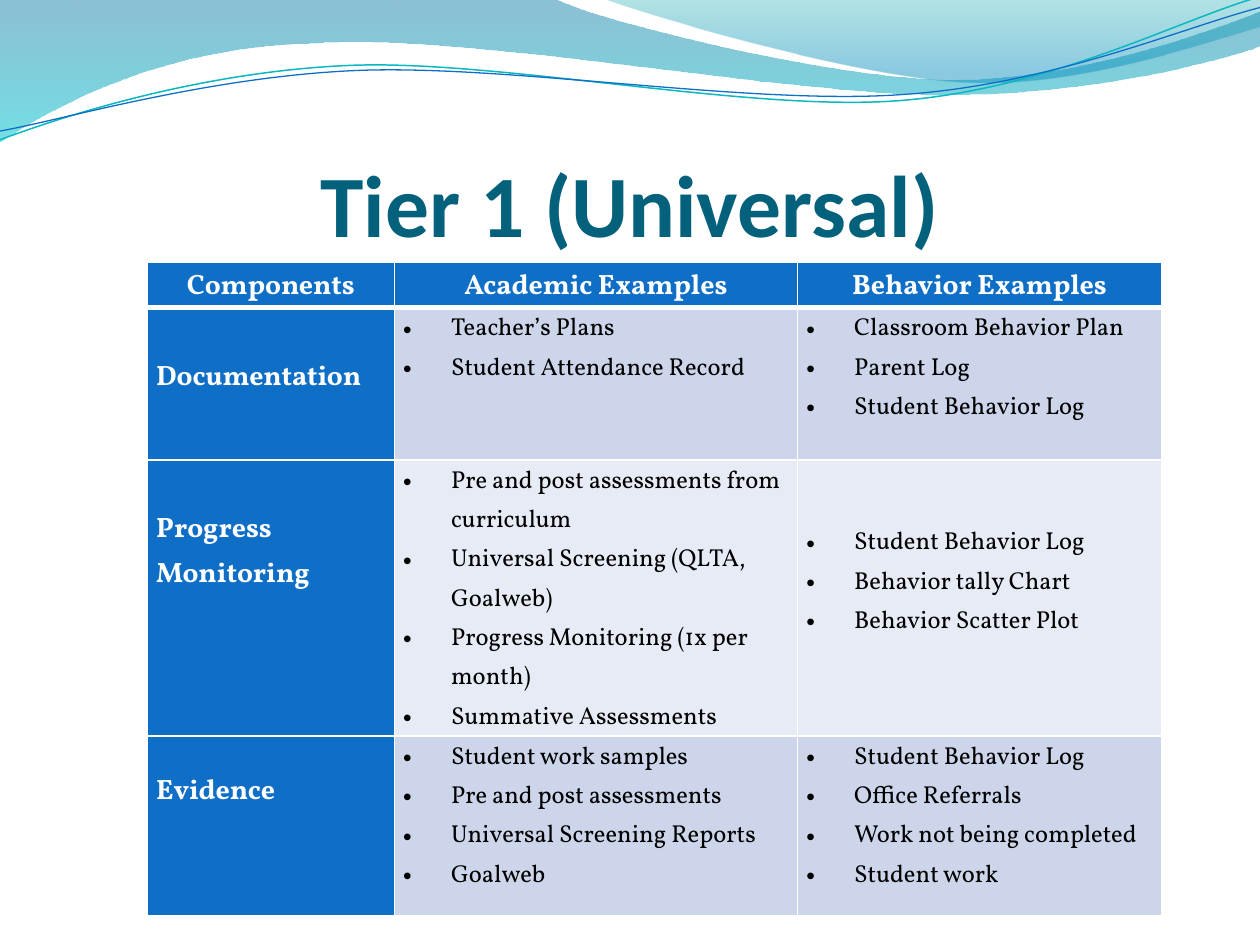
from dataclasses import dataclass
from typing import Optional

from lxml.etree import SubElement
from pptx import Presentation
from pptx.dml.color import RGBColor
from pptx.enum.text import MSO_ANCHOR, PP_ALIGN
from pptx.oxml.ns import qn
from pptx.util import Inches, Pt

BLUE, TEAL, WHITE, BLACK = "0F6FC6", "04617B", "FFFFFF", "000000"
BANDS = ["CCD5EA", "E7EBF5"]


@dataclass
class Stop:
    color: str
    position: float
    opacity: int


@dataclass
class Wave:
    """Outline in inches: a 2-tuple is a corner, a 6-tuple a Bezier curve."""
    start: tuple[float, float]
    segments: list[tuple[float, ...]]
    stops: Optional[list[Stop]] = None
    line: Optional[tuple[str, float]] = None


@dataclass
class Row:
    height: float
    label: str
    academic: list[str]
    behavior: list[str]
    label_drop: float
    behavior_drop: float = 0


WAVES = [
    Wave((0, 0), [(4.4, -0.01), (4.76, 0.17, 6.64, 0.63, 7.58, 0.63),
                  (8.53, 0.63, 9.58, 0.26, 10, 0.09), (10.01, 0.36),
                  (9.83, 0.44, 8.7, 0.76, 7.46, 0.75),
                  (6.22, 0.75, 3.82, 0.28, 2.57, 0.34),
                  (1.29, 0.36, 0.46, 0.83, -0.01, 1.13)],
         stops=[Stop("0074A1", 0, 45), Stop("00C6CF", 1, 55)]),
    Wave((4.79, -0.01), [(5.09, 0.11, 6.82, 0.62, 7.69, 0.65),
                         (8.56, 0.69, 9.61, 0.32, 10, 0.21), (10, 0)],
         stops=[Stop("00A1A9", 0, 30), Stop("008BBF", 0.8, 45)]),
    Wave((0, 1.11), [(0.48, 0.93, 1.58, 0.57, 2.77, 0.52),
                     (3.95, 0.47, 5.93, 0.89, 7.13, 0.8),
                     (8.33, 0.71, 9.38, 0.15, 9.98, -0.02)],
         line=("0AB8BF", 0.85)),
    Wave((0, 1.04), [(0.47, 0.96, 1.64, 0.61, 2.83, 0.56),
                     (4.03, 0.51, 5.97, 0.84, 7.17, 0.75),
                     (8.36, 0.67, 9.41, 0.21, 10, 0.06)],
         line=(BLUE, 0.75)),
]

HEADERS = ["Components", "Academic Examples", "Behavior Examples"]
COLUMN_WIDTHS = [1.96, 3.2, 2.89]
HEADER_HEIGHT = 0.36
ROWS = [
    Row(1.21, "Documentation",
        ["Teacher’s Plans", "Student Attendance Record"],
        ["Classroom Behavior Plan", "Parent Log", "Student Behavior Log"],
        label_drop=0.36),
    Row(2.19, "Progress Monitoring",
        ["Pre and post assessments from curriculum",
         "Universal Screening (QLTA, Goalweb)",
         "Progress Monitoring (1x per month)", "Summative Assessments"],
        ["Student Behavior Log", "Behavior tally Chart", "Behavior Scatter Plot"],
        label_drop=0.36, behavior_drop=0.49),
    Row(1.43, "Evidence",
        ["Student work samples", "Pre and post assessments",
         "Universal Screening Reports", "Goalweb"],
        ["Student Behavior Log", "Office Referrals",
         "Work not being completed", "Student work"],
        label_drop=0.25),
]


def rgb(value: str) -> RGBColor:
    return RGBColor.from_string(value)


def add_text(p, text: str, *, size=14, font="Vollkorn", color=BLACK, bold=False,
             align=PP_ALIGN.LEFT, spacing=1.15, bullet=False) -> None:
    p.alignment, p.line_spacing = align, spacing
    r = p.add_run()
    r.text = text
    r.font.size, r.font.name, r.font.bold = Pt(size), font, bold
    r.font.color.rgb = rgb(color)
    if bullet:
        pPr = p._p.get_or_add_pPr()
        pPr.set("marL", str(Inches(0.38)))
        pPr.set("indent", str(-Inches(0.38)))
        SubElement(pPr, qn("a:buFont"), typeface="Arial")
        SubElement(pPr, qn("a:buChar"), char="•")


def bend(sp, segments: list[tuple[float, ...]]) -> None:
    """Join the three straight steps of each curve into one Bezier curve."""
    steps = iter(list(sp._element.iter(qn("a:lnTo"))))
    for seg in segments:
        step = next(steps)
        if len(seg) == 6:
            step.tag = qn("a:cubicBezTo")
            for extra in (next(steps), next(steps)):
                step.append(extra[0])
                extra.getparent().remove(extra)


def add_wave(shapes, wave: Wave) -> None:
    points = [(Inches(x), Inches(y)) for seg in wave.segments
              for x, y in zip(seg[0::2], seg[1::2])]
    builder = shapes.build_freeform(Inches(wave.start[0]), Inches(wave.start[1]))
    builder.add_line_segments(points, close=wave.stops is not None)
    sp = builder.convert_to_shape()
    bend(sp, wave.segments)
    sp.shadow.inherit = False
    if wave.stops:
        sp.line.fill.background()
        sp.fill.gradient()
        sp.fill.gradient_angle = 270
        for target, stop in zip(sp.fill.gradient_stops, wave.stops):
            target.color.rgb, target.position = rgb(stop.color), stop.position
        for clr, stop in zip(sp._element.spPr.iter(qn("a:srgbClr")), wave.stops):
            SubElement(clr, qn("a:alpha"), val=str(stop.opacity * 1000))
    if wave.line:
        color, width = wave.line
        sp.fill.background()
        sp.line.color.rgb, sp.line.width = rgb(color), Pt(width)


def set_borders(cell, **widths: float) -> None:
    tcPr = cell._tc.get_or_add_tcPr()
    for i, side in enumerate("LRTB"):
        ln = SubElement(tcPr, qn(f"a:ln{side}"), w=str(Pt(widths.get(side, 1))))
        SubElement(SubElement(ln, qn("a:solidFill")), qn("a:srgbClr"), val=WHITE)
        tcPr.insert(i, ln)


def fill_cell(cell, lines: list[str], fill: str, drop: float = 0,
              borders: Optional[dict[str, float]] = None, **text_format) -> None:
    cell.margin_left = cell.margin_right = Inches(0.07)
    cell.margin_top, cell.margin_bottom = Inches(drop), 0
    cell.fill.solid()
    cell.fill.fore_color.rgb = rgb(fill)
    set_borders(cell, **(borders or {}))
    tf = cell.text_frame
    for i, line in enumerate(lines):
        add_text(tf.add_paragraph() if i else tf.paragraphs[0], line, **text_format)


def add_tier_table(shapes) -> None:
    heights = [HEADER_HEIGHT] + [row.height for row in ROWS]
    table = shapes.add_table(len(heights), len(HEADERS), Inches(1.17), Inches(2.08),
                             Inches(sum(COLUMN_WIDTHS)), Inches(sum(heights))).table
    for column, width in zip(table.columns, COLUMN_WIDTHS):
        column.width = Inches(width)
    for table_row, height in zip(table.rows, heights):
        table_row.height = Inches(height)

    heading = dict(size=16, color=WHITE, bold=True)
    for c, title in enumerate(HEADERS):
        fill_cell(table.cell(0, c), [title], BLUE, borders={"B": 3},
                  align=PP_ALIGN.CENTER, **heading)
    for i, row in enumerate(ROWS):
        label, academic, behavior = table.rows[i + 1].cells
        band = BANDS[i % 2]
        top = {"T": 1 if i else 3}
        fill_cell(label, [row.label], BLUE, row.label_drop, top, **heading)
        fill_cell(academic, row.academic, band, 0, top, bullet=True)
        fill_cell(behavior, row.behavior, band, row.behavior_drop, top, bullet=True)


def main() -> None:
    prs = Presentation()
    prs.slide_width, prs.slide_height = Inches(10), Inches(7.5)
    s = prs.slides.add_slide(prs.slide_layouts[6])

    # Wave header
    for wave in WAVES:
        add_wave(s.shapes, wave)

    # Title
    tf = s.shapes.add_textbox(Inches(0.5), Inches(0.77), Inches(9), Inches(1.25)).text_frame
    tf.word_wrap, tf.vertical_anchor = True, MSO_ANCHOR.BOTTOM
    tf.margin_left = tf.margin_right = tf.margin_bottom = 0
    add_text(tf.paragraphs[0], "Tier 1 (Universal)", size=50, font="Calibri",
             color=TEAL, bold=True, align=PP_ALIGN.CENTER, spacing=1.0)

    # Table of components and examples
    add_tier_table(s.shapes)
    prs.save("out.pptx")


if __name__ == "__main__":
    main()
